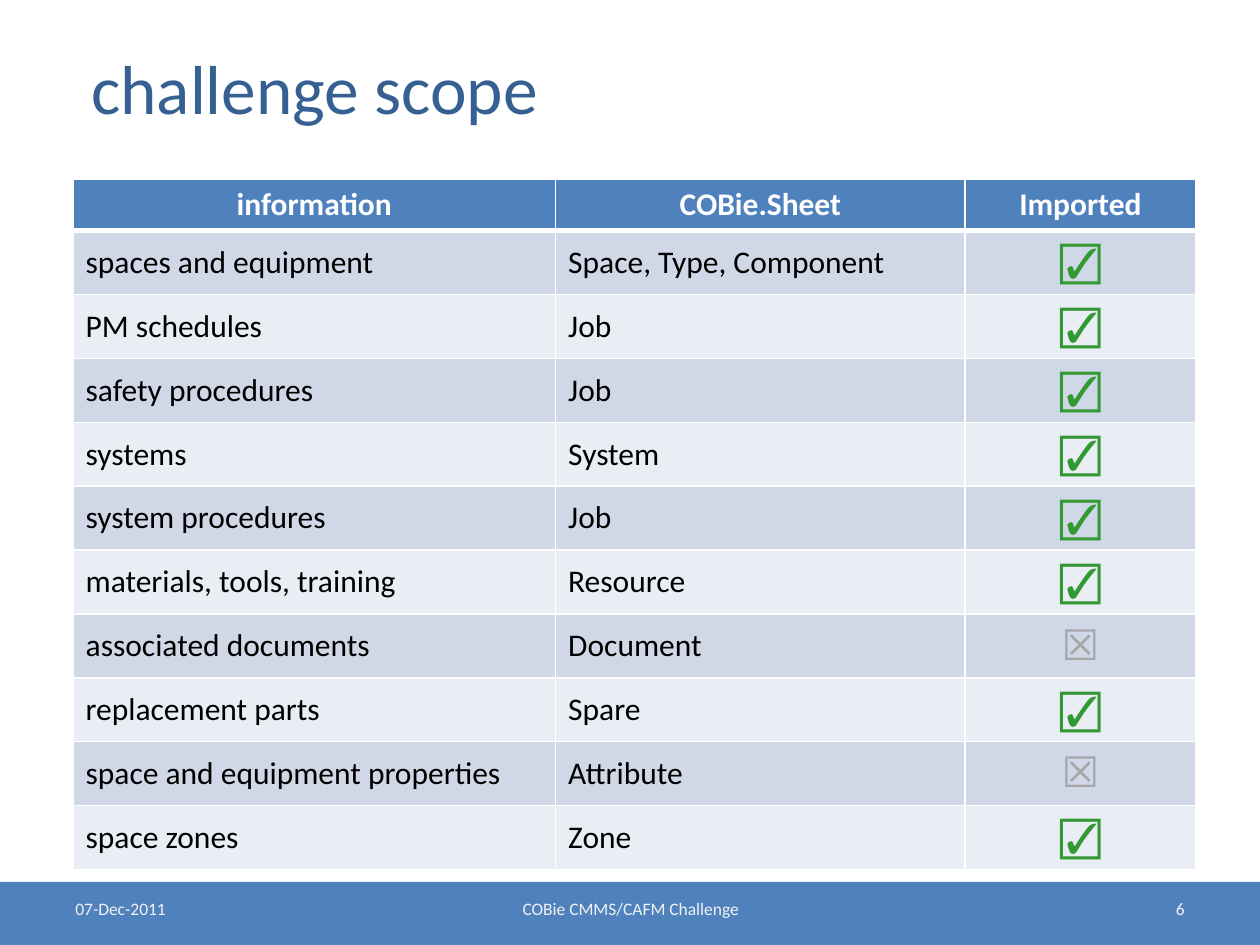
import dataclasses

import lxml.etree
import pptx
import pptx.dml.color
import pptx.enum.shapes
import pptx.enum.text
import pptx.oxml.ns
import pptx.util

Inches = pptx.util.Inches
ALIGN = pptx.enum.text.PP_ALIGN
MIDDLE = pptx.enum.text.MSO_ANCHOR.MIDDLE
TOP = pptx.enum.text.MSO_ANCHOR.TOP


@dataclasses.dataclass(frozen=True)
class Theme:
    font: str = "Calibri"
    title: str = "376092"
    accent: str = "4F81BD"
    bands: tuple = ("D0D8E8", "E9EDF4")
    white: str = "FFFFFF"
    text: str = "000000"
    footer: str = "F2F2F2"
    imported: str = "339933"
    skipped: str = "A6A6A6"
    title_size: float = 39.6
    body_size: int = 18
    mark_size: int = 24
    footer_size: int = 10
    thin: int = 1
    thick: int = 3


def rgb(color):
    return pptx.dml.color.RGBColor.from_string(color)


class PageBuilder:
    """Draws styled elements on the current slide."""

    def __init__(self, page, theme):
        self.page = page
        self.theme = theme

    def style(self, para, size, color, align=ALIGN.LEFT, bold=False):
        para.alignment = align
        font = para.font
        font.name = self.theme.font
        font.size = pptx.util.Pt(size)
        font.color.rgb = rgb(color)
        font.bold = bold

    def title(self, text, left, top, width, height):
        box = self.page.shapes.title
        box.left, box.top = Inches(left), Inches(top)
        box.width, box.height = Inches(width), Inches(height)
        frame = box.text_frame
        frame.text = text
        frame.vertical_anchor = MIDDLE
        self.style(frame.paragraphs[0], self.theme.title_size, self.theme.title)

    def band(self, left, top, width, height):
        box = self.page.shapes.add_shape(
            pptx.enum.shapes.MSO_SHAPE.RECTANGLE,
            Inches(left), Inches(top), Inches(width), Inches(height))
        box.shadow.inherit = False
        box.fill.solid()
        box.fill.fore_color.rgb = rgb(self.theme.accent)
        box.line.fill.background()

    def footer(self, text, left, top, width, height, align):
        box = self.page.shapes.add_textbox(
            Inches(left), Inches(top), Inches(width), Inches(height))
        frame = box.text_frame
        frame.word_wrap = True
        frame.text = text
        self.style(frame.paragraphs[0], self.theme.footer_size,
                   self.theme.footer, align)

    def borders(self, cell, top, bottom):
        properties = cell._tc.get_or_add_tcPr()
        qn = pptx.oxml.ns.qn
        widths = {"a:lnL": self.theme.thin, "a:lnR": self.theme.thin,
                  "a:lnT": top, "a:lnB": bottom}
        for tag, width in widths.items():
            line = lxml.etree.SubElement(
                properties, qn(tag), w=str(pptx.util.Pt(width)))
            fill = lxml.etree.SubElement(line, qn("a:solidFill"))
            lxml.etree.SubElement(fill, qn("a:srgbClr"), val=self.theme.white)

    def cell(self, cell, text, fill, anchor, top, bottom, **style):
        self.borders(cell, top, bottom)
        cell.fill.solid()
        cell.fill.fore_color.rgb = rgb(fill)
        cell.vertical_anchor = anchor
        cell.text = text
        self.style(cell.text_frame.paragraphs[0], **style)

    def table(self, headings, rows, left, top, widths, header_height, row_height):
        theme = self.theme
        height = header_height + row_height * len(rows)
        table = self.page.shapes.add_table(
            len(rows) + 1, len(headings), Inches(left), Inches(top),
            Inches(sum(widths)), Inches(height)).table
        for column, width in zip(table.columns, widths):
            column.width = Inches(width)
        for row in table.rows:
            row.height = Inches(row_height)
        table.rows[0].height = Inches(header_height)

        for column, heading in enumerate(headings):
            self.cell(table.cell(0, column), heading, theme.accent, TOP,
                      theme.thin, theme.thick, size=theme.body_size,
                      color=theme.white, align=ALIGN.CENTER, bold=True)
        label_style = dict(size=theme.body_size, color=theme.text)
        for index, (information, sheet, imported) in enumerate(rows):
            mark_style = dict(
                size=theme.mark_size, align=ALIGN.CENTER, bold=True,
                color=theme.imported if imported else theme.skipped)
            entries = [(information, label_style), (sheet, label_style),
                       ("☑" if imported else "☒", mark_style)]
            for column, (text, style) in enumerate(entries):
                self.cell(table.cell(index + 1, column), text,
                          theme.bands[index % 2], MIDDLE,
                          theme.thin if index else theme.thick, theme.thin,
                          **style)


HEADINGS = ["information", "COBie.Sheet", "Imported"]
SCOPE = [
    ("spaces and equipment", "Space, Type, Component", True),
    ("PM schedules", "Job", True),
    ("safety procedures", "Job", True),
    ("systems", "System", True),
    ("system procedures", "Job", True),
    ("materials, tools, training", "Resource", True),
    ("associated documents", "Document", False),
    ("replacement parts", "Spare", True),
    ("space and equipment properties", "Attribute", False),
    ("space zones", "Zone", True),
]
FOOTERS = [
    ("07-Dec-2011", 0.5, 2.33, ALIGN.LEFT),
    ("COBie CMMS/CAFM Challenge", 3.42, 3.17, ALIGN.CENTER),
    ("6", 7.17, 2.33, ALIGN.RIGHT),
]


def main():
    deck = pptx.Presentation()
    deck.slide_width, deck.slide_height = Inches(10), Inches(7.5)
    page = deck.slides.add_slide(deck.slide_layouts.get_by_name("Title Only"))
    builder = PageBuilder(page, Theme())
    builder.title(" challenge scope", 0.5, 0.3, 9, 0.78)
    builder.table(HEADINGS, SCOPE, 0.58, 1.42, [3.83, 3.25, 1.83], 0.41, 0.5)
    builder.band(0, 7, 10, 0.5)
    for text, left, width, align in FOOTERS:
        builder.footer(text, left, 7.08, width, 0.27, align)
    deck.save("out.pptx")


if __name__ == "__main__":
    main()
